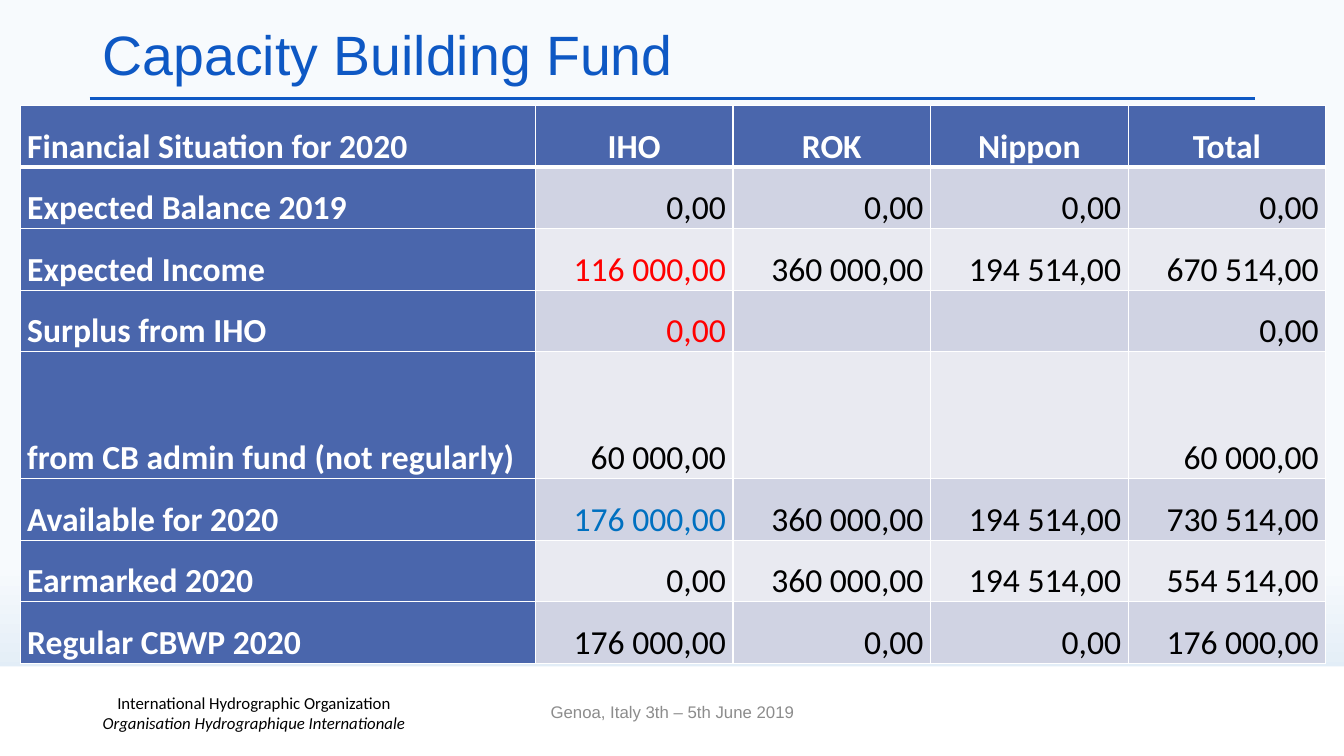
"""Build the Capacity Building Fund slide with its 2020 financial table."""
from dataclasses import dataclass

from pptx import Presentation
from pptx.dml.color import RGBColor as Rgb
from pptx.enum.shapes import MSO_CONNECTOR as Connector, MSO_SHAPE as Preset
from pptx.enum.text import MSO_ANCHOR as Anchor, PP_ALIGN as Align
from pptx.oxml import parse_xml
from pptx.oxml.ns import nsdecls
from pptx.util import Inches, Pt


@dataclass(frozen=True)
class Theme:
    """Colours, fonts and type sizes of the slide."""
    accent: str = "0E58C4"
    header: str = "4A66AC"
    bands: tuple[str, str] = ("D0D3E3", "E9EAF1")
    white: str = "FFFFFF"
    black: str = "000000"
    grey: str = "8C8C8C"
    red: str = "FF0000"
    blue: str = "0070C0"
    sky: tuple[tuple[float, str], ...] = ((0.75, "F7FAFD"), (1.0, "D0E2F1"))
    heading_font: str = "Arial"
    body_font: str = "Calibri"
    title_size: float = 39.6
    table_size: float = 24
    footer_size: float = 12


THEME = Theme()


@dataclass(frozen=True)
class Style:
    """Look of a piece of text."""
    font: str
    size: float
    color: str
    bold: bool = False
    italic: bool = False


@dataclass(frozen=True)
class Label:
    """A text box whose lines share one paragraph."""
    lines: tuple[tuple[str, Style], ...]
    left: float
    top: float
    width: float
    height: float
    align: Align = Align.CENTER
    spacing: float = 1.0


@dataclass(frozen=True)
class FundRow:
    """A table row with its caption, amounts and colour of the first amount."""
    caption: str
    amounts: tuple[str, str, str, str]
    first_color: str = THEME.black
    height: float = 0.61


TITLE = Style(THEME.heading_font, THEME.title_size, THEME.accent)
VENUE = Style(THEME.heading_font, THEME.footer_size, THEME.grey)
ENGLISH = Style(THEME.body_font, THEME.footer_size, THEME.black)
FRENCH = Style(THEME.body_font, THEME.footer_size, THEME.black, italic=True)
CAPTION = Style(THEME.body_font, THEME.table_size, THEME.white, bold=True)

LABELS = (
    Label((("International Hydrographic Organization", ENGLISH),
           ("Organisation Hydrographique Internationale", FRENCH)), 0.27, 6.87, 4.5, 0.4),
    Label((("Capacity Building Fund", TITLE),), 0.92, 0.28, 11.5, 0.59, Align.LEFT, 0.9),
    Label((("Genoa, Italy 3th – 5th June 2019", VENUE),), 4.42, 6.86, 4.5, 0.4),
)

ROWS = (
    FundRow("Financial Situation for 2020", ("IHO", "ROK", "Nippon", "Total")),
    FundRow("Expected Balance 2019", ("0,00", "0,00", "0,00", "0,00")),
    FundRow("Expected Income", ("116 000,00", "360 000,00", "194 514,00", "670 514,00"), THEME.red),
    FundRow("Surplus from IHO", ("0,00", "", "", "0,00"), THEME.red),
    FundRow("from CB admin fund (not regularly)", ("60 000,00", "", "", "60 000,00"), height=1.26),
    FundRow("Available for 2020", ("176 000,00", "360 000,00", "194 514,00", "730 514,00"), THEME.blue),
    FundRow("Earmarked 2020", ("0,00", "360 000,00", "194 514,00", "554 514,00")),
    FundRow("Regular CBWP 2020", ("176 000,00", "0,00", "0,00", "176 000,00")),
)
COLUMNS = (5.11, 1.96, 1.96, 1.96, 1.96)


def set_all(target, values: dict) -> None:
    """Set every named attribute on the target."""
    for name, value in values.items():
        setattr(target, name, value)


def add_span(para, text: str, style: Style) -> None:
    """Add a styled run to a paragraph."""
    span = para.add_run()
    span.text = text
    set_all(span.font, {"name": style.font, "size": Pt(style.size),
                        "bold": style.bold, "italic": style.italic})
    span.font.color.rgb = Rgb.from_string(style.color)


def paint_background(page) -> None:
    """Give the page its vertical gradient."""
    fill = page.background.fill
    fill.gradient()
    fill.gradient_angle = 270
    for stop, (position, color) in zip(fill.gradient_stops, THEME.sky):
        stop.position = position
        stop.color.rgb = Rgb.from_string(color)


def add_frame(page) -> None:
    """Draw the title rule and the white footer band."""
    rule = page.shapes.add_connector(
        Connector.STRAIGHT, Inches(0.89), Inches(0.98), Inches(12.45), Inches(0.98))
    rule.line.color.rgb = Rgb.from_string(THEME.accent)
    rule.line.width = Pt(2.25)
    rule._element.spPr.append(parse_xml(f"<a:effectLst {nsdecls('a')}/>"))
    band = page.shapes.add_shape(
        Preset.RECTANGLE, Inches(0), Inches(6.61), Inches(13.33), Inches(0.89))
    band.shadow.inherit = False
    band.fill.solid()
    band.fill.fore_color.rgb = Rgb.from_string(THEME.white)
    band.line.fill.background()


def add_label(page, label: Label) -> None:
    """Add a text box with its lines."""
    box = page.shapes.add_textbox(*map(Inches, (label.left, label.top, label.width, label.height)))
    set_all(box.text_frame, {"word_wrap": True, "vertical_anchor": Anchor.MIDDLE})
    para = box.text_frame.paragraphs[0]
    set_all(para, {"alignment": label.align, "line_spacing": label.spacing})
    for index, (text, style) in enumerate(label.lines):
        if index:
            para.add_line_break()
        add_span(para, text, style)


def add_borders(cell, top: float, bottom: float) -> None:
    """Draw the white borders of a cell."""
    properties = cell._tc.get_or_add_tcPr()
    for index, (side, width) in enumerate({"L": 1, "R": 1, "T": top, "B": bottom}.items()):
        properties.insert(index, parse_xml(
            f'<a:ln{side} {nsdecls("a")} w="{Pt(width)}"><a:solidFill>'
            f'<a:srgbClr val="{THEME.white}"/></a:solidFill></a:ln{side}>'))


def fill_cell(cell, text: str, style: Style, align: Align, color: str) -> None:
    """Write and colour a table cell."""
    set_all(cell, {"margin_left": Inches(0.07), "margin_right": Inches(0.07),
                   "margin_top": 0, "margin_bottom": 0, "vertical_anchor": Anchor.BOTTOM})
    cell.fill.solid()
    cell.fill.fore_color.rgb = Rgb.from_string(color)
    if text:
        para = cell.text_frame.paragraphs[0]
        set_all(para, {"alignment": align, "line_spacing": 1.15})
        add_span(para, text, style)


def add_fund_table(page) -> None:
    """Add the table of the fund."""
    height = sum(row.height for row in ROWS)
    table = page.shapes.add_table(
        len(ROWS), len(COLUMNS), Inches(0.2), Inches(1.05),
        Inches(sum(COLUMNS)), Inches(height)).table
    for column, width in zip(table.columns, COLUMNS):
        column.width = Inches(width)
    for r, row in enumerate(ROWS):
        table.rows[r].height = Inches(row.height)
        for c, text in enumerate((row.caption, *row.amounts)):
            cell = table.cell(r, c)
            if r == 0 or c == 0:
                align = Align.CENTER if c else Align.LEFT
                fill_cell(cell, text, CAPTION, align, THEME.header)
            else:
                color = row.first_color if c == 1 else THEME.black
                amount = Style(THEME.body_font, THEME.table_size, color)
                fill_cell(cell, text, amount, Align.RIGHT, THEME.bands[(r - 1) % 2])
            add_borders(cell, top=3 if r == 1 else 1, bottom=3 if r == 0 else 1)


def main() -> None:
    """Build and save the deck."""
    deck = Presentation()
    set_all(deck, {"slide_width": Inches(13.33), "slide_height": Inches(7.5)})
    page = deck.slides.add_slide(deck.slide_layouts[6])
    paint_background(page)
    add_frame(page)
    for label in LABELS:
        add_label(page, label)
    add_fund_table(page)
    deck.save("out.pptx")


if __name__ == "__main__":
    main()
